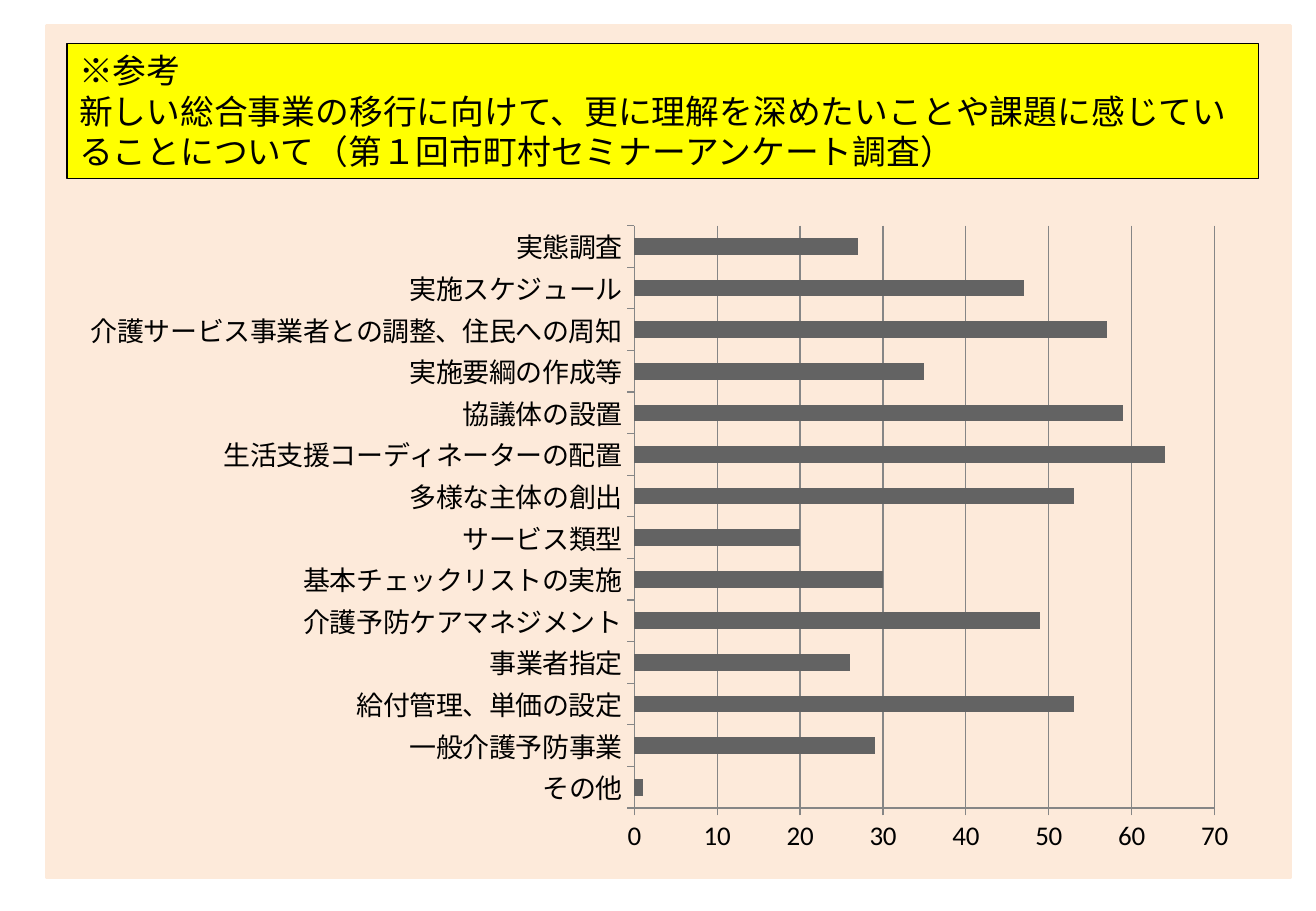
from lxml import etree
from pptx import Presentation
from pptx import util as u
from pptx.chart.data import CategoryChartData
from pptx.dml.color import RGBColor
from pptx.enum import chart as charts, shapes, text
from pptx.oxml import ns

LATIN = "Calibri"
JAPANESE = "Noto Sans CJK JP"
BLACK = "000000"
PEACH = "FDEADA"
YELLOW = "FFFF00"
BAR_GRAY = "636363"
AXIS_GRAY = "868686"

HEADING = [
    "※参考",
    "新しい総合事業の移行に向けて、更に理解を深めたいことや課題に感じていることについて（第１回市町村セミナーアンケート調査）",
]
ANSWERS = [
    ("その他", 1),
    ("一般介護予防事業", 29),
    ("給付管理、単価の設定", 53),
    ("事業者指定", 26),
    ("介護予防ケアマネジメント", 49),
    ("基本チェックリストの実施", 30),
    ("サービス類型", 20),
    ("多様な主体の創出", 53),
    ("生活支援コーディネーターの配置", 64),
    ("協議体の設置", 59),
    ("実施要綱の作成等", 35),
    ("介護サービス事業者との調整、住民への周知", 57),
    ("実施スケジュール", 47),
    ("実態調査", 27),
]


def color(value):
    return RGBColor.from_string(value)


def set_east_asian(properties, name):
    element = etree.SubElement(properties, ns.qn("a:ea"))
    element.set("typeface", name)


class SlideBuilder:
    def __init__(self, slide):
        self.slide = slide

    def box(self, left, top, width, height, fill, line, weight):
        shape = self.slide.shapes.add_shape(
            shapes.MSO_SHAPE.RECTANGLE, u.Pt(left), u.Pt(top), u.Pt(width), u.Pt(height)
        )
        shape.shadow.inherit = False
        shape.fill.solid()
        shape.fill.fore_color.rgb = color(fill)
        shape.line.color.rgb = color(line)
        shape.line.width = u.Pt(weight)
        return shape

    def add_lines(self, shape, lines, size):
        frame = shape.text_frame
        frame.word_wrap = True
        frame.auto_size = text.MSO_AUTO_SIZE.SHAPE_TO_FIT_TEXT
        frame.vertical_anchor = text.MSO_ANCHOR.TOP
        for index, line in enumerate(lines):
            paragraph = frame.add_paragraph() if index else frame.paragraphs[0]
            paragraph.alignment = text.PP_ALIGN.LEFT
            run = paragraph.add_run()
            run.text = line
            run.font.size = u.Pt(size)
            run.font.name = LATIN
            run.font.color.rgb = color(BLACK)
            set_east_asian(run.font._element, JAPANESE)

    def bar_chart(self, left, top, width, height, answers, plot):
        data = CategoryChartData()
        data.categories = [name for name, count in answers]
        data.add_series("Series 1", [count for name, count in answers])
        chart = self.slide.shapes.add_chart(
            charts.XL_CHART_TYPE.BAR_CLUSTERED,
            u.Pt(left), u.Pt(top), u.Pt(width), u.Pt(height), data,
        ).chart
        chart.has_title = False
        chart.has_legend = False
        chart.font.name = LATIN
        chart.font.size = u.Pt(10)
        chart.font.color.rgb = color(BLACK)
        bars = chart.plots[0]
        bars.vary_by_categories = False
        bars.gap_width = 150
        bars.series[0].format.fill.solid()
        bars.series[0].format.fill.fore_color.rgb = color(BAR_GRAY)
        self.axis(chart.category_axis, JAPANESE)
        self.axis(chart.value_axis, LATIN)
        chart.category_axis.has_major_gridlines = False
        chart.value_axis.minimum_scale = 0
        chart.value_axis.maximum_scale = 70
        chart.value_axis.major_unit = 10
        chart.value_axis.has_major_gridlines = True
        self.line(chart.value_axis.major_gridlines.format.line)
        self.place_plot(chart, plot)

    def axis(self, axis, font):
        axis.major_tick_mark = charts.XL_TICK_MARK.OUTSIDE
        axis.minor_tick_mark = charts.XL_TICK_MARK.NONE
        self.line(axis.format.line)
        labels = axis.tick_labels.font
        labels.size = u.Pt(16)
        labels.name = font
        labels.color.rgb = color(BLACK)
        set_east_asian(labels._element, JAPANESE)

    def line(self, line):
        line.color.rgb = color(AXIS_GRAY)
        line.width = u.Pt(0.75)

    def place_plot(self, chart, plot):
        area = chart._chartSpace.find(".//" + ns.qn("c:plotArea"))
        for layout in area.findall(ns.qn("c:layout")):
            area.remove(layout)
        layout = etree.Element(ns.qn("c:layout"))
        manual = etree.SubElement(layout, ns.qn("c:manualLayout"))
        settings = [("layoutTarget", "inner"), ("xMode", "edge"), ("yMode", "edge")]
        settings += zip("xywh", plot)
        for tag, value in settings:
            etree.SubElement(manual, ns.qn("c:" + tag)).set("val", str(value))
        area.insert(0, layout)


def main():
    presentation = Presentation()
    presentation.slide_width = u.Pt(780)
    presentation.slide_height = u.Pt(540)
    builder = SlideBuilder(presentation.slides.add_slide(presentation.slide_layouts[6]))
    builder.box(27.5, 15, 737.5, 505, PEACH, PEACH, 2)
    heading = builder.box(39.75, 26, 706.25, 80, YELLOW, BLACK, 0.75)
    builder.add_lines(heading, HEADING, 20)
    builder.bar_chart(39, 126, 702, 388, ANSWERS, (0.48, 0.02, 0.49, 0.89))
    presentation.save("out.pptx")


if __name__ == "__main__":
    main()
